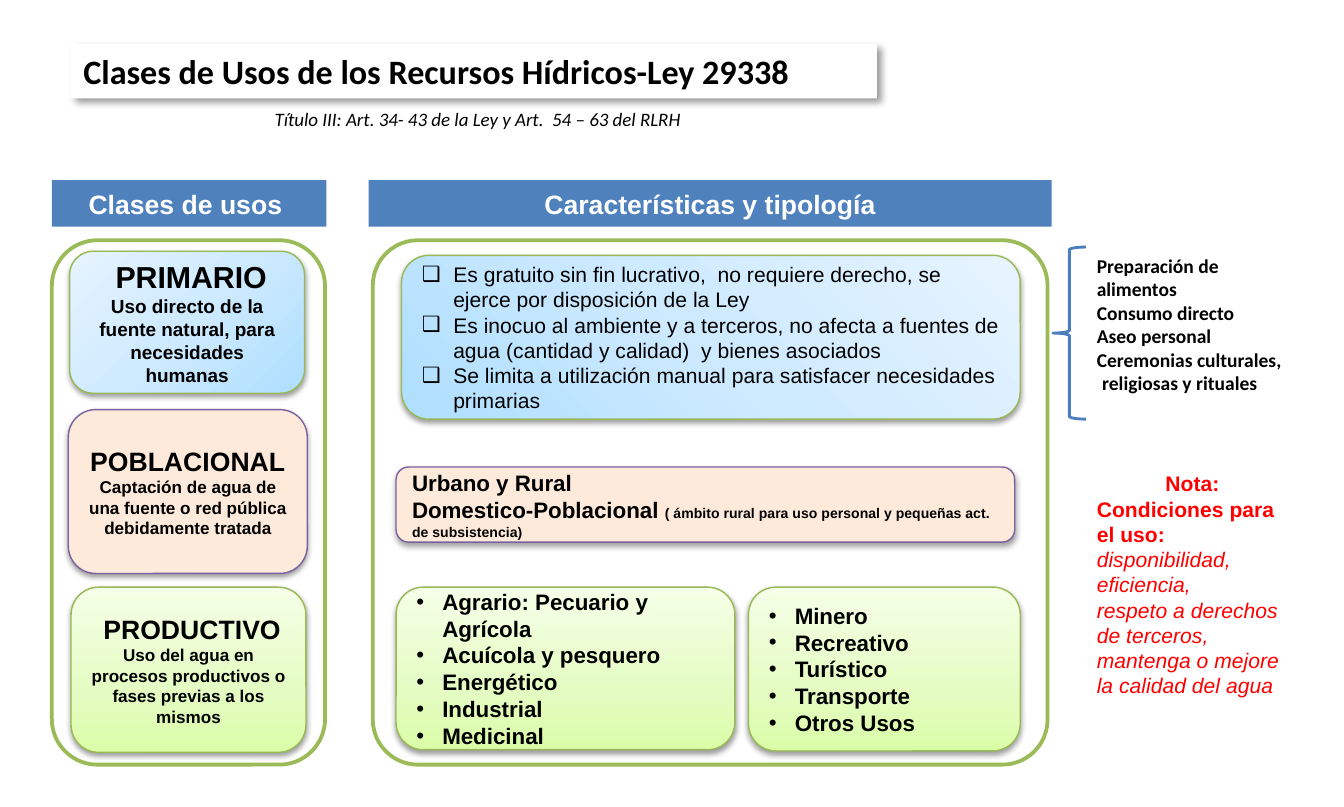
from lxml import etree
from pptx import Presentation
from pptx.dml.color import RGBColor
from pptx.enum.shapes import MSO_SHAPE
from pptx.enum.text import MSO_ANCHOR, MSO_AUTO_SIZE, PP_ALIGN
from pptx.oxml import parse_xml
from pptx.oxml.ns import nsdecls, qn
from pptx.util import Inches, Pt

LEFT, MID = PP_ALIGN.LEFT, PP_ALIGN.CENTER
BLUE = [(0, "AFDFFF"), (50, "CEEAFF"), (100, "E7F4FF")]
LIME = [(0, "DAFDA7"), (35, "E4FCC2"), (100, "F5FFE7")]
PEACH = "FDEADA"
SOFT = (38, 3.1, 1.6, 90)
DEEP = (40, 4, 3, 45)


def paint(part, tone):
    """Give a fill, line or font the solid colour of a hex string."""
    if hasattr(part, "solid"):
        part.solid()
        part = part.fore_color
    elif hasattr(part, "color"):
        part = part.color
    part.rgb = RGBColor.from_string(tone)


def blend(shape, stops, focus):
    """Fill with a gradient: upward, or round from the focus (l, t, r, b)."""
    marks = "".join(
        f'<a:gs pos="{pos * 1000}"><a:srgbClr val="{tone}"/></a:gs>'
        for pos, tone in stops)
    if focus:
        sides = " ".join(f'{s}="{v * 1000}"' for s, v in zip("ltrb", focus))
        way = f'<a:path path="circle"><a:fillToRect {sides}/></a:path>'
    else:
        way = '<a:lin ang="16200000" scaled="0"/>'
    shape.fill.solid()
    props = shape.element.spPr
    props.replace(props.find(qn("a:solidFill")), parse_xml(
        f'<a:gradFill {nsdecls("a")} rotWithShape="1">'
        f'<a:gsLst>{marks}</a:gsLst>{way}</a:gradFill>'))


def shade(shape, shadow):
    """Drop the inherited shadow and set one: alpha, blur, distance, angle."""
    shape.shadow.inherit = False
    if shadow:
        alpha, blur, dist, turn = shadow
        shape.element.spPr.find(qn("a:effectLst")).append(parse_xml(
            f'<a:outerShdw {nsdecls("a")} blurRad="{Pt(blur)}" '
            f'dist="{Pt(dist)}" dir="{turn * 60000}" rotWithShape="0">'
            f'<a:srgbClr val="000000"><a:alpha val="{alpha * 1000}"/>'
            f'</a:srgbClr></a:outerShdw>'))


def write(shape, paras, align=LEFT, anchor=MSO_ANCHOR.MIDDLE,
          bullet=None, indent=0, **base):
    """Set paragraphs; each is a string or a list of (text, format) runs."""
    frame = shape.text_frame
    frame.word_wrap = True
    frame.auto_size = MSO_AUTO_SIZE.NONE
    frame.vertical_anchor = anchor
    frame.margin_left = frame.margin_right = Inches(0.09)
    frame.margin_top = frame.margin_bottom = Inches(0.05)
    for num, runs in enumerate(paras):
        para = frame.add_paragraph() if num else frame.paragraphs[0]
        para.alignment = align
        if bullet:
            props = para._p.get_or_add_pPr()
            props.set("marL", str(Inches(indent)))
            props.set("indent", str(-Inches(indent)))
            etree.SubElement(props, qn("a:buFont")).set("typeface", "Arial")
            etree.SubElement(props, qn("a:buChar")).set("char", bullet)
        for text, extra in [(runs, {})] if isinstance(runs, str) else runs:
            form = {"name": "Arial", "tone": "000000", **base, **extra}
            if "align" in form:
                para.alignment = form["align"]
            run = para.add_run()
            run.text = text
            run.font.name = form["name"]
            run.font.size = Pt(form["size"])
            run.font.bold = form.get("bold", False)
            run.font.italic = form.get("italic", False)
            paint(run.font, form["tone"])


class Board:
    def __init__(self, deck):
        self.slide = deck.slides.add_slide(deck.slide_layouts[5])

    def title(self, box, text, **form):
        head = self.slide.shapes.title
        head.left, head.top, head.width, head.height = map(Inches, box)
        paint(head.fill, "FFFFFF")
        shade(head, DEEP)
        write(head, [text], **form)

    def shape(self, kind, box, fill=None, line=None, width=0.75,
              round=None, focus=None, shadow=None):
        item = self.slide.shapes.add_shape(kind, *map(Inches, box))
        if isinstance(fill, list):
            blend(item, fill, focus)
        elif fill:
            paint(item.fill, fill)
        else:
            item.fill.background()
        if line:
            paint(item.line, line)
            item.line.width = Pt(width)
        else:
            item.line.fill.background()
        if round:
            item.adjustments[0] = round
        shade(item, shadow)
        return item

    def panel(self, box, round):
        self.shape(MSO_SHAPE.ROUNDED_RECTANGLE, box, "FFFFFF", "9BBB59", 2, round)

    def card(self, box, fill, paras, focus=None, **form):
        line = "7D60A0" if fill == PEACH else "98B955"
        item = self.shape(MSO_SHAPE.ROUNDED_RECTANGLE, box, fill, line,
                          round=0.167, focus=focus, shadow=SOFT)
        write(item, paras, **form)

    def block(self, box, fill, paras, **form):
        write(self.shape(MSO_SHAPE.RECTANGLE, box, fill), paras, **form)

    def label(self, box, paras, **form):
        item = self.slide.shapes.add_textbox(*map(Inches, box))
        write(item, paras, anchor=MSO_ANCHOR.TOP, **form)


def main():
    deck = Presentation()
    deck.slide_width, deck.slide_height = Inches(9.84), Inches(5.91)
    board = Board(deck)

    board.title((0.52, 0.32, 5.9, 0.4),
                "Clases de Usos de los Recursos Hídricos-Ley 29338",
                name="Calibri", size=18, bold=True)
    board.label((1.92, 0.74, 4.49, 0.27),
                ["Título III: Art. 34- 43 de la Ley y Art.  54 – 63 del RLRH"],
                name="Calibri", size=10, italic=True)

    for left, width, text in [(0.38, 2.01, "Clases de usos "),
                              (2.7, 5, "Características y tipología")]:
        board.block((left, 1.32, width, 0.34), "4F81BD", [text],
                    align=MID, size=14, bold=True, tone="FFFFFF")
    for left, width, round in [(2.73, 4.94, 0.086), (0.38, 2, 0.167)]:
        board.panel((left, 1.76, width, 3.84), round)

    classes = [
        ((0.51, 1.84, 1.72, 1.04), BLUE, (100, 100, 0, 0), 16, 10, " PRIMARIO",
         "Uso directo de la fuente natural, para necesidades humanas"),
        ((0.5, 3, 1.75, 1.2), PEACH, None, 14, 9, "POBLACIONAL",
         "Captación de agua de una fuente o red pública debidamente tratada"),
        ((0.52, 4.3, 1.72, 1.21), LIME, None, 14, 9, " PRODUCTIVO",
         "Uso del agua en procesos productivos o fases previas a los mismos"),
    ]
    for box, fill, focus, big, small, name, text in classes:
        board.card(box, fill, [[(name, {"size": big})], text], focus,
                   align=MID, size=small, bold=True)

    board.card((2.94, 1.87, 4.53, 1.2), BLUE, [
        "Es gratuito sin fin lucrativo,  no requiere derecho, se ejerce por "
        "disposición de la Ley",
        "Es inocuo al ambiente y a terceros, no afecta a fuentes de agua "
        "(cantidad y calidad)  y bienes asociados",
        "Se limita a utilización manual para satisfacer necesidades primarias",
    ], (0, 100, 100, 0), bullet="❑", indent=0.23, size=11.1)
    board.card((2.9, 3.42, 4.53, 0.55), PEACH, [
        "Urbano y Rural",
        [("Domestico-Poblacional ", {}),
         ("( ámbito rural para uso personal y pequeñas act. de subsistencia)",
          {"size": 7.4})],
    ], size=11.8, bold=True)
    uses = [
        ((2.9, 4.3, 2.48, 1.19), ["Agrario: Pecuario y Agrícola",
         "Acuícola y pesquero", "Energético", "Industrial", "Medicinal"]),
        ((5.48, 4.3, 1.99, 1.2), ["Minero", "Recreativo", "Turístico",
         "Transporte", "Otros Usos"]),
    ]
    for box, items in uses:
        board.card(box, LIME, items, bullet="•", indent=0.19,
                   size=11.8, bold=True)

    board.shape(MSO_SHAPE.LEFT_BRACE, (7.71, 1.81, 0.24, 1.26),
                line="4B7EBC", width=1.5)
    board.label((7.94, 1.81, 1.56, 1.14), [
        "Preparación de alimentos", "Consumo directo", "Aseo personal",
        "Ceremonias culturales,",
        [(" ", {"name": "Arial"}), ("religiosas y rituales", {})],
    ], name="Calibri", size=10.3, bold=True)

    strong = {"bold": True}
    slant = {"italic": True}
    board.block((7.94, 3.39, 1.58, 1.78), "FFFFFF", [
        [("Nota:", {"align": MID, **strong})],
        [("Condiciones para el uso: ", strong),
         ("disponibilidad, eficiencia,", slant)],
        [("respeto a derechos de terceros, mantenga o mejore la calidad "
          "del agua", slant)],
    ], size=11.1, tone="FF0000")

    deck.save("out.pptx")


if __name__ == "__main__":
    main()
